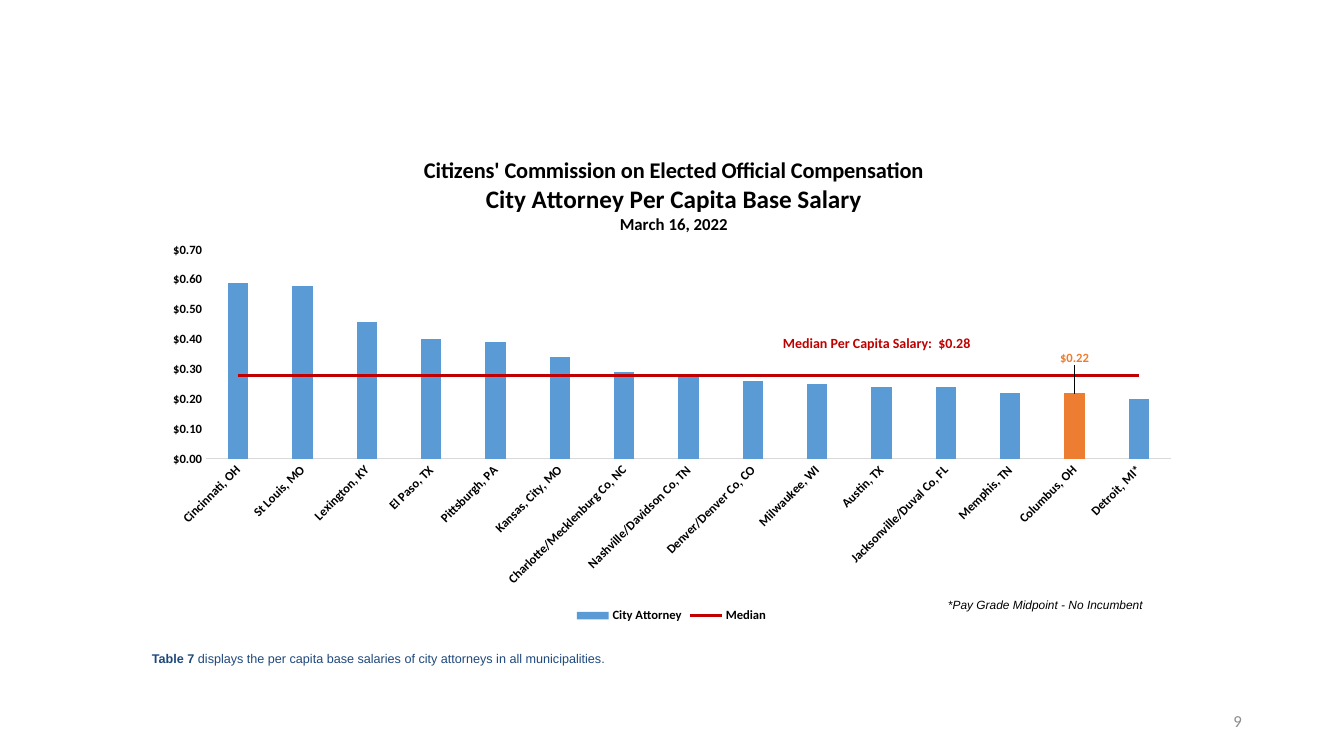
from lxml import etree
from pptx import Presentation
from pptx.chart.data import CategoryChartData
from pptx.dml.color import RGBColor
from pptx.enum.chart import XL_CHART_TYPE, XL_LEGEND_POSITION, XL_MARKER_STYLE, XL_TICK_MARK
from pptx.enum.text import MSO_ANCHOR, PP_ALIGN
from pptx.oxml import parse_xml
from pptx.oxml.ns import qn
from pptx.util import Emu, Pt

COLUMN = XL_CHART_TYPE.COLUMN_CLUSTERED
BOTTOM = XL_LEGEND_POSITION.BOTTOM
NO_TICK, NO_MARKER = XL_TICK_MARK.NONE, XL_MARKER_STYLE.NONE
TOP, MIDDLE = MSO_ANCHOR.TOP, MSO_ANCHOR.MIDDLE
LEFT, RIGHT = PP_ALIGN.LEFT, PP_ALIGN.RIGHT
CHART_NS = "http://schemas.openxmlformats.org/drawingml/2006/chart"

BLACK, WHITE, BLUE, ORANGE, RED = "000000", "FFFFFF", "5B9BD5", "ED7D31", "C00000"
NAVY, GRAY, AXIS_GRAY = "1F497D", "8C8C8C", "D9D9D9"

TITLE = [("Citizens' Commission on Elected Official Compensation", 16),
         ("City Attorney Per Capita Base Salary", 18),
         ("March 16, 2022", 12)]
SALARIES = [
    ("Cincinnati, OH", 0.59), ("St Louis, MO", 0.58), ("Lexington, KY", 0.46),
    ("El Paso, TX", 0.40), ("Pittsburgh, PA", 0.39), ("Kansas, City, MO", 0.34),
    ("Charlotte/Mecklenburg Co, NC", 0.29), ("Nashville/Davidson Co, TN", 0.28),
    ("Denver/Denver Co, CO", 0.26), ("Milwaukee, WI", 0.25), ("Austin, TX", 0.24),
    ("Jacksonville/Duval Co, FL", 0.24), ("Memphis, TN", 0.22),
    ("Columbus, OH", 0.22), ("Detroit, MI*", 0.20),
]
MEDIAN = 0.28
HIGHLIGHT = "Columbus, OH"
DOLLARS = '"$"#,##0.00'

# Boxes are left, top, width, height in px
CHART_BOX = (152, 130, 1039, 497)
PLOT_BOX = (206, 250, 965, 209)
TITLE_AT = (421, 152)
LABEL_RISE = 24
LEADER_Y = (367, 394)


def px(n):
    return Emu(round(n * 914400 / 100.8))


def rgb(color):
    return RGBColor.from_string(color)


def style(font, size, color=BLACK, bold=False, italic=False, name="Calibri"):
    font.size, font.bold, font.italic, font.name = Pt(size), bold, italic, name
    font.color.rgb = rgb(color)


def add_text(s, box, runs, align=LEFT, anchor=TOP, inset=(10, 5), fill=WHITE, **fmt):
    """Add one paragraph; runs holds (text, bold) pairs."""
    sp = s.shapes.add_textbox(*map(px, box))
    if fill:
        sp.fill.solid()
        sp.fill.fore_color.rgb = rgb(fill)
    tf = sp.text_frame
    tf.word_wrap, tf.vertical_anchor = True, anchor
    tf.margin_left = tf.margin_right = px(inset[0])
    tf.margin_top = tf.margin_bottom = px(inset[1])
    p = tf.paragraphs[0]
    p.alignment = align
    for text, bold in runs:
        r = p.add_run()
        r.text = text
        style(r.font, bold=bold, **fmt)


def layout(x, y, w=None, h=None, target=None, mode="edge"):
    """Return a manual chart layout, with px turned into shares of the chart."""
    cw, ch = CHART_BOX[2:]
    root = parse_xml(f'<c:layout xmlns:c="{CHART_NS}"><c:manualLayout/></c:layout>')
    values = [("layoutTarget", target), ("xMode", mode), ("yMode", mode),
              ("x", round(x / cw, 4)), ("y", round(y / ch, 4))]
    if w:
        values += [("w", round(w / cw, 4)), ("h", round(h / ch, 4))]
    for tag, value in values:
        if value is not None:
            etree.SubElement(root[0], qn("c:" + tag)).set("val", str(value))
    return root


def set_layout(parent, index, new):
    for old in parent.findall(qn("c:layout")):
        parent.remove(old)
    parent.insert(index, new)


def move_to_line_plot(chart):
    """Turn the second column series into a line on the same axes."""
    bars = chart.plots[0]._element
    ser = bars.findall(qn("c:ser"))[1]
    for el in ser.findall(qn("c:invertIfNegative")):
        ser.remove(el)
    line = parse_xml(f'<c:lineChart xmlns:c="{CHART_NS}"><c:grouping val="standard"/>'
                     '<c:varyColors val="0"/><c:marker val="1"/></c:lineChart>')
    line.insert(2, ser)
    for ax in bars.findall(qn("c:axId")):
        etree.SubElement(line, qn("c:axId")).set("val", ax.get("val"))
    bars.addnext(line)


def format_axes(chart):
    cat, val = chart.category_axis, chart.value_axis
    for axis in (cat, val):
        axis.major_tick_mark = axis.minor_tick_mark = NO_TICK
        axis.has_major_gridlines = False
        style(axis.tick_labels.font, 9, bold=True)
    cat.format.line.color.rgb = rgb(AXIS_GRAY)
    cat.format.line.width = Pt(0.75)
    body = cat._element.find(qn("c:txPr")).find(qn("a:bodyPr"))
    body.set("rot", "-2700000")
    body.set("vert", "horz")
    val.format.line.fill.background()
    val.minimum_scale, val.maximum_scale, val.major_unit = 0, 0.7, 0.1
    val.tick_labels.number_format = DOLLARS
    val.tick_labels.number_format_is_linked = False


def format_series(chart, highlight):
    bars, line = chart.plots
    bars.gap_width, bars.overlap, bars.vary_by_categories = 219, -27, False
    city, median = bars.series[0], line.series[0]
    for part, color in ((city, BLUE), (city.points[highlight], ORANGE)):
        part.format.fill.solid()
        part.format.fill.fore_color.rgb = rgb(color)
    label = city.points[highlight].data_label
    style(label.font, 9, ORANGE, bold=True)
    set_layout(label._dLbl, 1, layout(0, -LABEL_RISE, mode="factor"))
    city.data_labels.show_value = False
    median.format.line.color.rgb = rgb(RED)
    median.format.line.width = Pt(2.25)
    median.marker.style = NO_MARKER
    median.smooth = False


def add_salary_chart(s, highlight):
    data = CategoryChartData(number_format=DOLLARS)
    data.categories = [city for city, _ in SALARIES]
    data.add_series("City Attorney", [value for _, value in SALARIES])
    data.add_series("Median", [MEDIAN] * len(SALARIES))
    chart = s.shapes.add_chart(COLUMN, *map(px, CHART_BOX), data).chart
    style(chart.font, 10)
    move_to_line_plot(chart)
    format_axes(chart)
    format_series(chart, highlight)

    chart.has_title = True
    tf = chart.chart_title.text_frame
    for i, (text, size) in enumerate(TITLE):
        p = tf.add_paragraph() if i else tf.paragraphs[0]
        r = p.add_run()
        r.text = text
        style(r.font, size, bold=True)
    left, top = CHART_BOX[:2]
    set_layout(chart.chart_title._element, 1, layout(TITLE_AT[0] - left, TITLE_AT[1] - top))
    x, y, w, h = PLOT_BOX
    plot_area = chart._chartSpace.chart.plotArea
    set_layout(plot_area, 0, layout(x - left, y - top, w, h, target="inner"))

    chart.has_legend = True
    chart.legend.position = BOTTOM
    chart.legend.include_in_layout = False
    style(chart.legend.font, 9, bold=True)


def add_leader(s, highlight):
    x = px(PLOT_BOX[0] + (highlight + 0.5) * PLOT_BOX[2] / len(SALARIES))
    line = s.shapes.add_connector(1, x, px(LEADER_Y[0]), x, px(LEADER_Y[1]))
    line.line.color.rgb = rgb(BLACK)
    line.line.width = Pt(0.75)
    etree.SubElement(line._element.spPr, qn("a:effectLst"))


def main():
    prs = Presentation()
    prs.slide_width, prs.slide_height = px(1344), px(756)
    s = prs.slides.add_slide(prs.slide_layouts[6])
    highlight = [city for city, _ in SALARIES].index(HIGHLIGHT)
    add_text(s, (950, 701, 302, 40), [("9", False)], align=RIGHT, anchor=MIDDLE,
             fill=None, size=12, color=GRAY)
    add_salary_chart(s, highlight)
    add_leader(s, highlight)
    add_text(s, (773, 330, 212, 30), [("Median Per Capita Salary:  $0.28", True)],
             size=10, color=RED)
    add_text(s, (938, 593, 266, 37), [("*Pay Grade Midpoint - No Incumbent", False)],
             size=8.5, italic=True, name="Arial")
    add_text(s, (152, 651, 729, 36),
             [("Table 7 ", True),
              ("displays the per capita base salaries of city attorneys in all municipalities.", False)],
             inset=(0, 0), size=9, color=NAVY, name="Arial")
    prs.save("out.pptx")


if __name__ == "__main__":
    main()
